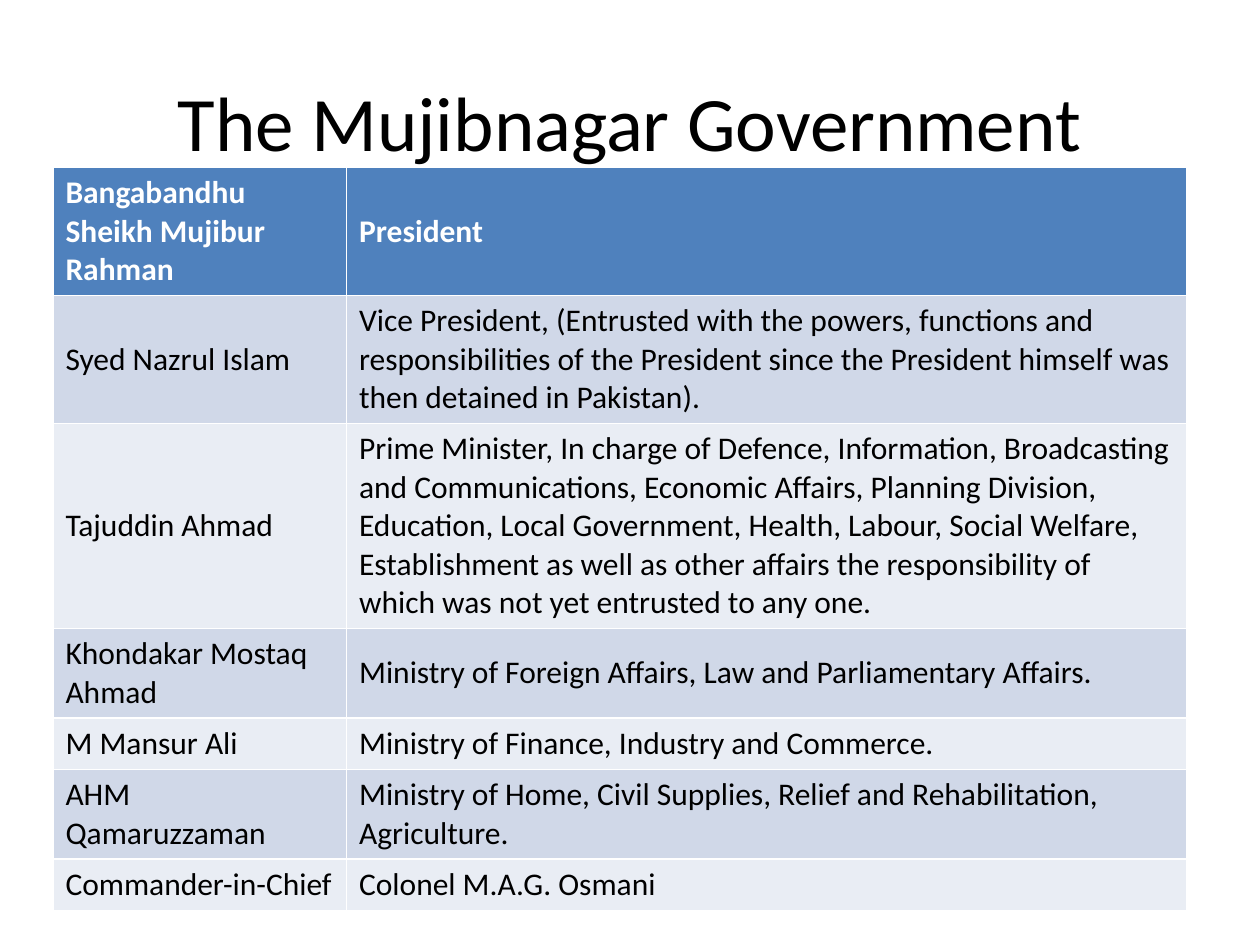
from pptx import Presentation
from pptx.dml.color import RGBColor
from pptx.enum.text import MSO_ANCHOR as Anchor, PP_ALIGN as Align
from pptx.util import Inches, Pt

BLACK = RGBColor(0x00, 0x00, 0x00)
WHITE = RGBColor(0xFF, 0xFF, 0xFF)
HEADER_BLUE = RGBColor(0x4F, 0x81, 0xBD)
BANDS = (RGBColor(0xD0, 0xD8, 0xE8), RGBColor(0xE9, 0xED, 0xF4))

MEMBERS = [
    ("Bangabandhu Sheikh Mujibur Rahman", "President"),
    ("Syed Nazrul Islam",
     "Vice President, (Entrusted with the powers, functions and responsibilities "
     "of the President since the President himself was then detained in Pakistan)."),
    ("Tajuddin Ahmad",
     "Prime Minister, In charge of Defence, Information, Broadcasting and "
     "Communications, Economic Affairs, Planning Division, Education, Local "
     "Government, Health, Labour, Social Welfare, Establishment as well as other "
     "affairs the responsibility of which was not yet entrusted to any one."),
    ("Khondakar Mostaq Ahmad",
     "Ministry of Foreign Affairs, Law and Parliamentary Affairs."),
    ("M Mansur Ali", "Ministry of Finance, Industry and Commerce."),
    ("AHM Qamaruzzaman",
     "Ministry of Home, Civil Supplies, Relief and Rehabilitation, Agriculture."),
    ("Commander-in-Chief", "Colonel M.A.G. Osmani"),
]


class GovernmentSlide:
    title_format = {"name": "Calibri", "size": Pt(44), "bold": False}
    cell_format = {"name": "Calibri", "size": Pt(18)}

    def __init__(self, deck):
        self.slide = deck.slides.add_slide(deck.slide_layouts[5])

    def format_font(self, font, values, color):
        for attribute, value in values.items():
            setattr(font, attribute, value)
        font.color.rgb = color

    def title(self, text, left, top, width, height):
        heading = self.slide.shapes.title
        place = {"left": left, "top": top, "width": width, "height": height}
        for attribute, value in place.items():
            setattr(heading, attribute, Inches(value))
        frame = heading.text_frame
        frame.text = text
        frame.vertical_anchor = Anchor.MIDDLE
        line = frame.paragraphs[0]
        line.alignment = Align.CENTER
        self.format_font(line.runs[0].font, self.title_format, BLACK)

    def table(self, rows, left, top, column_widths, row_height):
        members = self.slide.shapes.add_table(
            len(rows), len(column_widths), Inches(left), Inches(top),
            Inches(sum(column_widths)), Inches(row_height * len(rows))).table
        for column, width in zip(members.columns, column_widths):
            column.width = Inches(width)
        for row_index, row in enumerate(rows):
            members.rows[row_index].height = Inches(row_height)
            is_header = row_index == 0
            fill = HEADER_BLUE if is_header else BANDS[(row_index - 1) % 2]
            for column_index, text in enumerate(row):
                cell = members.cell(row_index, column_index)
                cell.text = text
                cell.vertical_anchor = Anchor.MIDDLE
                cell.fill.solid()
                cell.fill.fore_color.rgb = fill
                self.format_font(
                    cell.text_frame.paragraphs[0].runs[0].font,
                    {**self.cell_format, "bold": is_header},
                    WHITE if is_header else BLACK)


def main():
    deck = Presentation()
    deck.slide_width, deck.slide_height = Inches(10), Inches(7.5)
    government = GovernmentSlide(deck)
    government.title("The Mujibnagar Government", 0.5, 0.33, 9, 1.25)
    government.table(MEMBERS, 0.42, 1.33, (2.33, 6.67), 0.41)
    deck.save("out.pptx")


if __name__ == "__main__":
    main()
